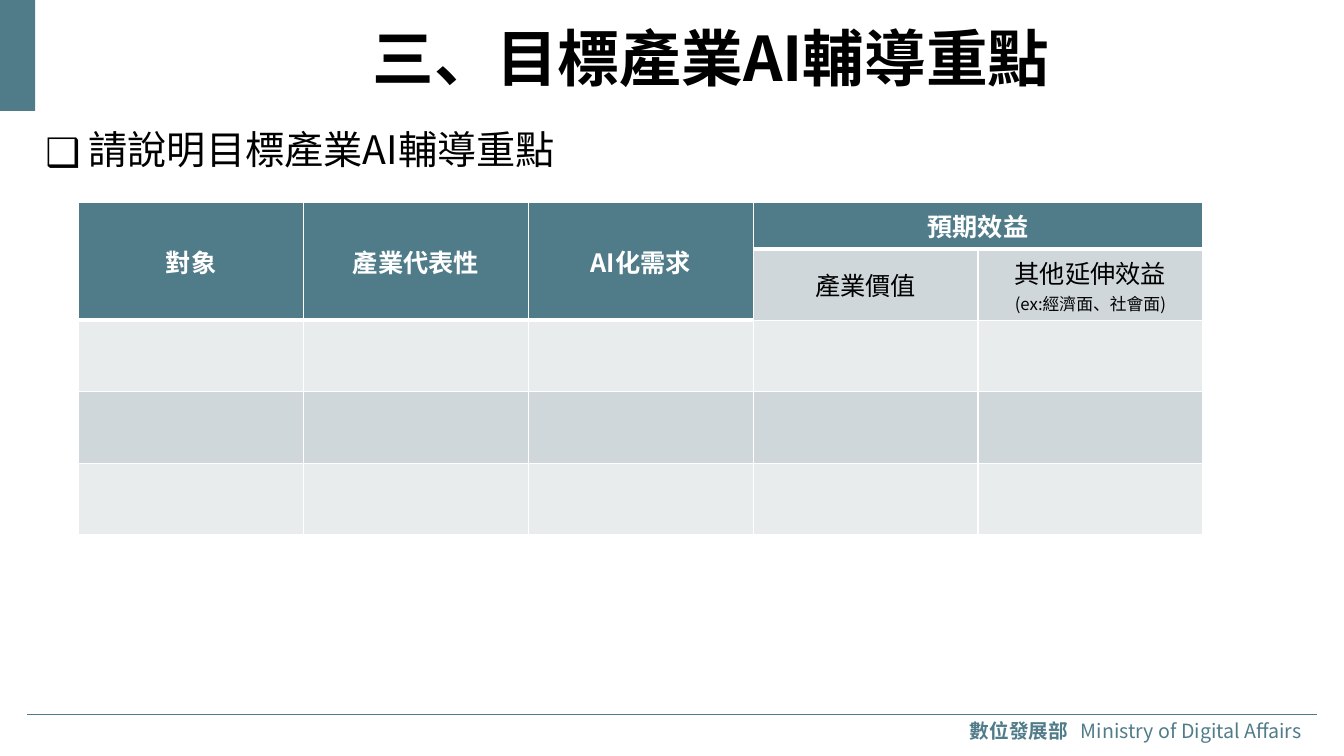
from dataclasses import dataclass

from lxml import etree
from pptx import Presentation
from pptx.dml.color import RGBColor
from pptx.enum.shapes import MSO_CONNECTOR, MSO_SHAPE
from pptx.enum.text import MSO_ANCHOR, MSO_AUTO_SIZE, PP_ALIGN
from pptx.oxml.ns import qn
from pptx.util import Inches, Pt

CENTER, LEFT = PP_ALIGN.CENTER, PP_ALIGN.LEFT
MIDDLE, TOP = MSO_ANCHOR.MIDDLE, MSO_ANCHOR.TOP
NO_AUTOFIT = MSO_AUTO_SIZE.NONE
RECTANGLE, STRAIGHT = MSO_SHAPE.RECTANGLE, MSO_CONNECTOR.STRAIGHT


@dataclass(frozen=True)
class Theme:
    teal: str = "507C89"
    band_dark: str = "D0D7DA"
    band_light: str = "E9ECED"
    black: str = "000000"
    white: str = "FFFFFF"
    heading_font: str = "Noto Sans CJK TC"
    body_font: str = "Noto Sans CJK SC"
    title_size: int = 44
    body_size: int = 28
    table_size: int = 18
    footer_size: int = 14
    note_size: int = 12
    thin_border: int = 1
    header_border: int = 3


class SlideBuilder:
    def __init__(self, slide, theme):
        self.slide = slide
        self.theme = theme

    def style_run(self, run, font, size, color, bold=False):
        """Format a run, using the font for East Asian glyphs as well."""
        run.font.size = Pt(size)
        run.font.bold = bold
        run.font.color.rgb = RGBColor.from_string(color)
        run.font.name = font
        etree.SubElement(run.font._element, qn("a:ea"), typeface=font)

    def accent_block(self, left, top, width, height):
        block = self.slide.shapes.add_shape(
            RECTANGLE, Inches(left), Inches(top), Inches(width), Inches(height))
        block.shadow.inherit = False
        block.fill.solid()
        block.fill.fore_color.rgb = RGBColor.from_string(self.theme.teal)
        block.line.fill.background()

    def rule(self, left, right, y):
        line = self.slide.shapes.add_connector(
            STRAIGHT, Inches(left), Inches(y), Inches(right), Inches(y))
        line.line.color.rgb = RGBColor.from_string(self.theme.teal)
        line.line.width = Pt(0.5)
        etree.SubElement(line._element.spPr, qn("a:effectLst"))

    def set_frame(self, shape, anchor):
        frame = shape.text_frame
        frame.word_wrap = True
        frame.auto_size = NO_AUTOFIT
        frame.vertical_anchor = anchor
        frame.margin_left = frame.margin_right = Inches(0.08)
        frame.margin_top = frame.margin_bottom = Inches(0.04)
        return frame

    def footer(self, name, translation, box, translation_tab):
        shape = self.slide.shapes.add_textbox(*map(Inches, box))
        paragraph = self.set_frame(shape, MIDDLE).paragraphs[0]
        paragraph.alignment = LEFT
        tabs = etree.SubElement(paragraph._p.get_or_add_pPr(), qn("a:tabLst"))
        etree.SubElement(tabs, qn("a:tab"), pos=str(Inches(translation_tab)), algn="l")
        for text, bold in ((name + "\t", True), (translation, False)):
            run = paragraph.add_run()
            run.text = text
            self.style_run(run, self.theme.heading_font, self.theme.footer_size,
                           self.theme.teal, bold)

    def fill_placeholder(self, shape, text, box, anchor):
        shape.left, shape.top, shape.width, shape.height = map(Inches, box)
        frame = self.set_frame(shape, anchor)
        frame.text = text
        paragraph = frame.paragraphs[0]
        paragraph.line_spacing = 0.9
        paragraph.space_before = Pt(0)
        return paragraph

    def title(self, text, box):
        heading = self.fill_placeholder(self.slide.shapes.title, text, box, MIDDLE)
        heading.alignment = CENTER
        self.style_run(heading.runs[0], self.theme.heading_font,
                       self.theme.title_size, self.theme.black, bold=True)

    def bullet(self, text, box, hanging):
        item = self.fill_placeholder(self.slide.placeholders[1], text, box, TOP)
        properties = item._p.get_or_add_pPr()
        properties.set("marL", str(Inches(hanging)))
        properties.set("indent", str(-Inches(hanging)))
        etree.SubElement(properties, qn("a:buFont"), typeface=self.theme.body_font)
        etree.SubElement(properties, qn("a:buChar"), char="❑")
        self.style_run(item.runs[0], self.theme.body_font,
                       self.theme.body_size, self.theme.black)

    def cell_border(self, cell, side, width):
        line = etree.SubElement(cell._tc.get_or_add_tcPr(), qn(f"a:ln{side}"),
                                w=str(Pt(width)))
        fill = etree.SubElement(line, qn("a:solidFill"))
        etree.SubElement(fill, qn("a:srgbClr"), val=self.theme.white)

    def cell_text(self, cell, lines, color, bold):
        """Write centred lines; those after the first take the note size."""
        cell.text_frame.text = "\n".join(lines)
        cell.vertical_anchor = MIDDLE
        for index, paragraph in enumerate(cell.text_frame.paragraphs):
            paragraph.alignment = CENTER
            size = self.theme.note_size if index else self.theme.table_size
            self.style_run(paragraph.runs[0], self.theme.body_font, size, color, bold)

    def focus_table(self, headers, benefits, left, top, column_width, row_heights):
        """Build a table whose last header spans the benefit columns."""
        theme = self.theme
        tall_headers = len(headers) - 1
        columns = tall_headers + len(benefits)
        table = self.slide.shapes.add_table(
            len(row_heights), columns, Inches(left), Inches(top),
            Inches(column_width * columns), Inches(sum(row_heights))).table
        table.first_row = table.horz_banding = False
        for column in table.columns:
            column.width = Inches(column_width)
        for row, height in zip(table.rows, row_heights):
            row.height = Inches(height)

        for row in range(len(row_heights)):
            for column in range(columns):
                cell = table.cell(row, column)
                header_end = 1 if column < tall_headers else 0
                is_header = row <= header_end
                top_width = theme.header_border if row == header_end + 1 else theme.thin_border
                bottom_width = theme.header_border if is_header else theme.thin_border
                for side, width in (("L", theme.thin_border), ("R", theme.thin_border),
                                    ("T", top_width), ("B", bottom_width)):
                    self.cell_border(cell, side, width)
                band = theme.band_dark if row % 2 else theme.band_light
                cell.fill.solid()
                cell.fill.fore_color.rgb = RGBColor.from_string(
                    theme.teal if is_header else band)

        for column in range(tall_headers):
            table.cell(0, column).merge(table.cell(1, column))
        table.cell(0, tall_headers).merge(table.cell(0, columns - 1))
        for column, header in enumerate(headers):
            self.cell_text(table.cell(0, column), [header], theme.white, True)
        for column, lines in enumerate(benefits, tall_headers):
            self.cell_text(table.cell(1, column), lines, theme.black, False)


def main():
    presentation = Presentation()
    presentation.slide_width = Inches(13.33)
    presentation.slide_height = Inches(7.5)
    slide = presentation.slides.add_slide(presentation.slide_layouts[1])
    builder = SlideBuilder(slide, Theme())

    builder.rule(0.27, 13.06, 7.09)
    builder.footer("數位發展部", "Ministry of Digital Affairs",
                   (9.54, 7.09, 3.52, 0.32), translation_tab=1.1)
    builder.accent_block(0, 0, 0.35, 1.1)
    builder.title("三、目標產業AI輔導重點", (1.15, 0.12, 11.81, 0.98))
    builder.bullet("請說明目標產業AI輔導重點", (0.37, 1.26, 12.6, 5.71), hanging=0.43)
    builder.focus_table(
        headers=["對象", "產業代表性", "AI化需求", "預期效益"],
        benefits=[["產業價值"], ["其他延伸效益", "(ex:經濟面、社會面)"]],
        left=0.78, top=2.01, column_width=2.23,
        row_heights=[0.41, 0.67, 0.71, 0.71, 0.71])
    presentation.save("out.pptx")


if __name__ == "__main__":
    main()
